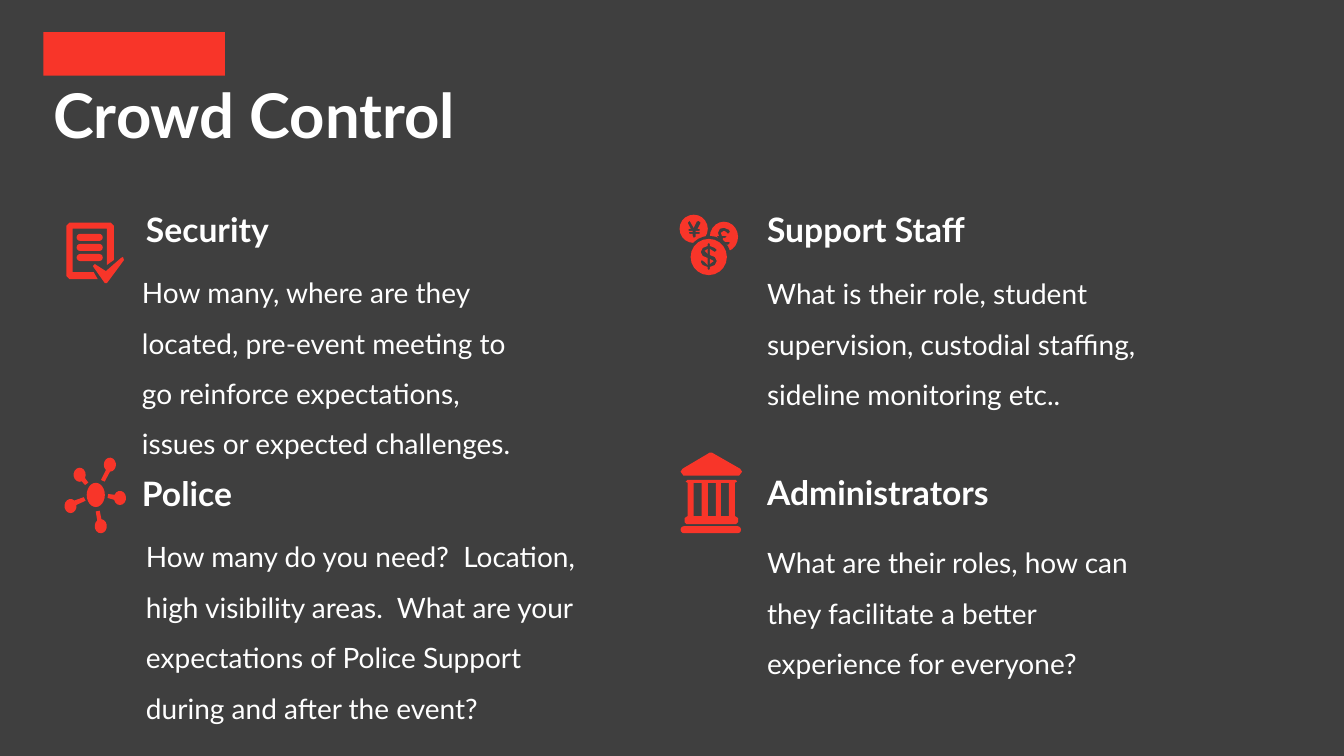
from dataclasses import dataclass
from math import atan2, cos, pi, sin
from typing import NamedTuple

from pptx import Presentation
from pptx.dml.color import RGBColor
from pptx.enum.shapes import MSO_SHAPE
from pptx.enum.text import MSO_ANCHOR, MSO_AUTO_SIZE
from pptx.util import Inches, Pt


@dataclass(frozen=True)
class Theme:
    """Colours, font and type sizes of the deck."""
    background: RGBColor = RGBColor(0x3F, 0x3F, 0x3F)
    accent: RGBColor = RGBColor(0xF8, 0x35, 0x29)
    text: RGBColor = RGBColor(0xFF, 0xFF, 0xFF)
    font: str = "Lato"
    title: int = 44
    heading: int = 24
    body: int = 20


class Box(NamedTuple):
    """A rectangle in inches."""
    left: float
    top: float
    width: float
    height: float

    def inner(self, left, top, width, height):
        """Return a box placed relative to this one."""
        return Box(self.left + left, self.top + top, width, height)

    def lengths(self):
        """Return the four sides as lengths."""
        return [Inches(side) for side in self]


THEME = Theme()


def add_text(page, box, text, size, bold=False, spacing=1.0,
             anchor=MSO_ANCHOR.TOP, fit=MSO_AUTO_SIZE.SHAPE_TO_FIT_TEXT):
    """Place one paragraph of text in a box."""
    frame = page.shapes.add_textbox(*box.lengths()).text_frame
    frame_format = {"word_wrap": True, "vertical_anchor": anchor, "auto_size": fit}
    for name, value in frame_format.items():
        setattr(frame, name, value)
    para = frame.paragraphs[0]
    para.line_spacing = spacing
    span = para.add_run()
    span.text = text
    for name, value in {"name": THEME.font, "size": Pt(size), "bold": bold}.items():
        setattr(span.font, name, value)
    span.font.color.rgb = THEME.text


def paint(shape, color):
    """Give a shape a flat fill with no line or shadow."""
    shape.shadow.inherit = False
    shape.fill.solid()
    shape.fill.fore_color.rgb = color
    shape.line.fill.background()


def add_part(parts, kind, box, color=THEME.accent):
    """Draw a flat preset shape."""
    shape = parts.add_shape(kind, *box.lengths())
    if kind == MSO_SHAPE.ROUNDED_RECTANGLE:
        shape.adjustments[0] = 0.5
    paint(shape, color)


def add_outline(parts, box, *contours):
    """Draw a polygon with holes from contours relative to a box."""
    builder = None
    for points in contours:
        corners = [(Inches(box.left + x), Inches(box.top + y)) for x, y in points]
        if builder is None:
            builder = parts.build_freeform(*corners[0])
        else:
            builder.move_to(*corners[0])
        builder.add_line_segments(corners[1:], close=True)
    paint(builder.convert_to_shape(), THEME.accent)


def arc(center, radii, start=0.0, sweep=2 * pi, steps=20):
    """Return points along an elliptical arc."""
    angles = [start + sweep * step / steps for step in range(steps)]
    return [(center[0] + radii[0] * cos(angle), center[1] + radii[1] * sin(angle))
            for angle in angles]


def draw_checklist(parts, box):
    """Draw a page with three lines and a check mark."""
    add_outline(parts, box, [
        (0.06, 0.49), (0.06, 0.06), (0.4, 0.06), (0.4, 0.42), (0.47, 0.37),
        (0.47, 0.03), (0.44, 0), (0.03, 0), (0, 0.03), (0, 0.53),
        (0.03, 0.56), (0.31, 0.56), (0.27, 0.49)])
    add_outline(parts, box, [
        (0.26, 0.43), (0.28, 0.41), (0.39, 0.48), (0.54, 0.35), (0.56, 0.34),
        (0.57, 0.37), (0.4, 0.6), (0.38, 0.6)])
    for row in range(3):
        add_part(parts, MSO_SHAPE.ROUNDED_RECTANGLE,
                 box.inner(0.1, 0.11 + 0.1 * row, 0.26, 0.07))


def draw_network(parts, box):
    """Draw a hub with five nodes, each with its link."""
    links = [((0.15, 0.17), (0.22, 0.26)), ((0.45, 0.07), (0.38, 0.23)),
             ((0.55, 0.4), (0.43, 0.38)), ((0.36, 0.68), (0.33, 0.53)),
             ((0.06, 0.48), (0.2, 0.41))]
    for node, end in links:
        angle = atan2(end[1] - node[1], end[0] - node[0])
        across = (-0.02 * sin(angle), 0.02 * cos(angle))
        rim = arc(node, (0.06, 0.07), angle + 0.3, 2 * pi - 0.3, 14)
        tip = [(end[0] + side * across[0], end[1] + side * across[1])
               for side in (-1, 1)]
        add_outline(parts, box, rim + tip)
    add_part(parts, MSO_SHAPE.OVAL, box.inner(0.22, 0.25, 0.18, 0.24))


def draw_coins(parts, box):
    """Draw three coins with currency signs cut out."""
    yen = [(0.09, 0.18), (0.1, 0.17), (0.13, 0.17), (0.13, 0.16), (0.09, 0.16),
           (0.09, 0.14), (0.11, 0.14), (0.08, 0.08), (0.1, 0.06), (0.14, 0.13),
           (0.17, 0.07), (0.19, 0.06), (0.21, 0.08), (0.18, 0.14), (0.2, 0.14),
           (0.2, 0.16), (0.16, 0.16), (0.16, 0.17), (0.2, 0.17), (0.2, 0.19),
           (0.16, 0.19), (0.16, 0.22), (0.14, 0.23), (0.13, 0.21), (0.13, 0.19),
           (0.1, 0.19)]
    pound = [(0.37, 0.21), (0.39, 0.21), (0.38, 0.18), (0.4, 0.14), (0.44, 0.13),
             (0.49, 0.15), (0.5, 0.17), (0.48, 0.19), (0.46, 0.17), (0.44, 0.16),
             (0.41, 0.18), (0.42, 0.21), (0.45, 0.21), (0.47, 0.22), (0.45, 0.23),
             (0.43, 0.23), (0.43, 0.25), (0.45, 0.27), (0.49, 0.27), (0.5, 0.28),
             (0.48, 0.3), (0.4, 0.28)]
    dollar = [(0.3, 0.52), (0.3, 0.54), (0.29, 0.55), (0.28, 0.54), (0.28, 0.52),
              (0.23, 0.5), (0.21, 0.47), (0.22, 0.45), (0.25, 0.47), (0.28, 0.5),
              (0.28, 0.43), (0.23, 0.41), (0.21, 0.37), (0.23, 0.33), (0.28, 0.31),
              (0.28, 0.29), (0.29, 0.28), (0.3, 0.29), (0.3, 0.31), (0.35, 0.33),
              (0.37, 0.35), (0.35, 0.37), (0.3, 0.34), (0.3, 0.4), (0.35, 0.42),
              (0.37, 0.46), (0.35, 0.5)]
    islands = [[(0.3, 0.44), (0.34, 0.46), (0.3, 0.49)],
               [(0.28, 0.34), (0.25, 0.36), (0.28, 0.39)]]
    add_outline(parts, box, arc((0.14, 0.14), (0.14, 0.14)), yen)
    add_outline(parts, box, arc((0.44, 0.22), (0.14, 0.15)), pound)
    add_part(parts, MSO_SHAPE.OVAL, box.inner(0.08, 0.21, 0.43, 0.42),
             THEME.background)
    add_outline(parts, box, arc((0.29, 0.42), (0.18, 0.18)), dollar, *islands)


def draw_institution(parts, box):
    """Draw a building with a roof, four columns and a step."""
    add_outline(parts, box, [
        (0, 0.2), (0.02, 0.17), (0.29, 0.01), (0.31, 0.01), (0.59, 0.17),
        (0.61, 0.2), (0.58, 0.24), (0.03, 0.24)])
    walls = [(0.07, 0.64), (0.07, 0.31), (0.05, 0.3), (0.07, 0.28), (0.55, 0.28),
             (0.56, 0.3), (0.54, 0.31), (0.54, 0.64), (0.57, 0.66), (0.57, 0.7),
             (0.55, 0.72), (0.06, 0.72), (0.04, 0.7), (0.04, 0.66)]
    gaps = [[(left, 0.31), (left + 0.08, 0.31), (left + 0.08, 0.64), (left, 0.64)]
            for left in (0.13, 0.27, 0.4)]
    add_outline(parts, box, walls, *gaps)
    add_part(parts, MSO_SHAPE.ROUNDED_RECTANGLE, box.inner(0, 0.74, 0.6, 0.07))


def add_header(page, box, title):
    """Place the accent bar and the slide title."""
    add_text(page, box.inner(0, 0.4, box.width, 0.91), title, THEME.title, bold=True,
             spacing=0.9, anchor=MSO_ANCHOR.MIDDLE, fit=MSO_AUTO_SIZE.NONE)
    add_part(page.shapes, MSO_SHAPE.RECTANGLE, box.inner(0, 0, 1.8, 0.43))


def add_topic(page, heading_box, heading, body_box, body, draw_icon, icon_box):
    """Place a topic's heading, body and icon."""
    add_text(page, heading_box, heading, THEME.heading, bold=True)
    add_text(page, body_box, body, THEME.body, spacing=1.5)
    draw_icon(page.shapes.add_group_shape().shapes, icon_box)


def main():
    """Build and save the deck."""
    deck = Presentation()
    deck.slide_width, deck.slide_height = Inches(13.33), Inches(7.5)
    page = deck.slides.add_slide(deck.slide_layouts[6])
    page.background.fill.solid()
    page.background.fill.fore_color.rgb = THEME.background
    add_header(page, Box(0.43, 0.32, 11.5, 1.31), "Crowd Control")
    topics = [
        (Box(1.35, 2.02, 1.53, 0.5), "Security", Box(1.31, 2.52, 4.12, 2.12),
         "How many, where are they located, pre-event meeting to go reinforce "
         "expectations, issues or expected challenges.",
         draw_checklist, Box(0.66, 2.21, 0.57, 0.6)),
        (Box(1.31, 4.64, 1.82, 0.5), "Police", Box(1.35, 5.14, 4.63, 2.12),
         "How many do you need?  Location, high visibility areas.  What are your "
         "expectations of Police Support during and after the event?",
         draw_network, Box(0.64, 4.54, 0.61, 0.75)),
        (Box(7.51, 2.02, 2.33, 0.5), "Support Staff", Box(7.51, 2.53, 4.18, 1.55),
         "What is their role, student supervision, custodial staffing, "
         "sideline monitoring etc..",
         draw_coins, Box(6.74, 2.13, 0.58, 0.6)),
        (Box(7.51, 4.63, 3.01, 0.5), "Administrators", Box(7.51, 5.2, 3.97, 1.55),
         "What are their roles, how can they facilitate a better "
         "experience for everyone?",
         draw_institution, Box(6.75, 4.48, 0.61, 0.81)),
    ]
    for topic in topics:
        add_topic(page, *topic)
    deck.save("out.pptx")


if __name__ == "__main__":
    main()
